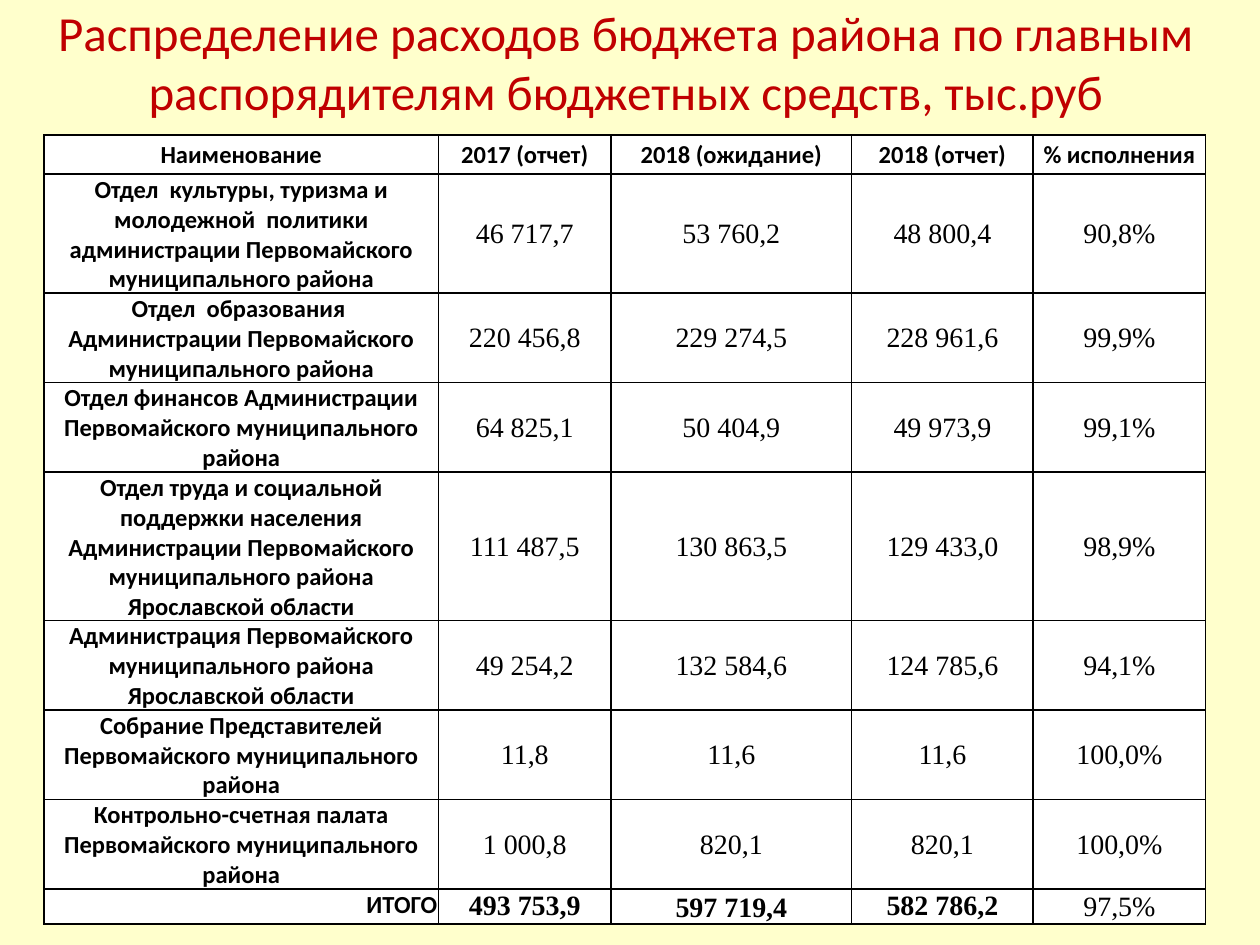
from dataclasses import dataclass

from lxml import etree
from pptx import Presentation
from pptx import util as u
from pptx.dml.color import RGBColor
from pptx.enum import text
from pptx.oxml import ns

WIDTH, HEIGHT = 10, 7.5
LINE_HEIGHT = 0.23
HEADER_HEIGHT = 0.31
COLUMN_WIDTHS = (3.13, 1.37, 1.91, 1.44, 1.37)
BLACK, WHITE, RED, CREAM = "000000", "FFFFFF", "C00000", "FFFFCC"
LABEL = dict(size=14, font="Calibri", bold=True)
VALUE = dict(size=16, font="Times New Roman", bold=False)
TOTAL = dict(VALUE, bold=True)
TOP, MIDDLE, BOTTOM = (
    text.MSO_ANCHOR.TOP,
    text.MSO_ANCHOR.MIDDLE,
    text.MSO_ANCHOR.BOTTOM,
)


@dataclass
class Department:
    name: str
    values: tuple[str, ...]
    lines: int = 3
    anchor: text.MSO_ANCHOR = TOP


HEADINGS = ("Наименование", "2017 (отчет)", "2018 (ожидание)", "2018 (отчет)", "% исполнения")
DEPARTMENTS = (
    Department(
        "Отдел  культуры, туризма и молодежной  политики администрации Первомайского муниципального района",
        ("46 717,7", "53 760,2", "48 800,4", "90,8%"), 4, MIDDLE,
    ),
    Department(
        "Отдел  образования  Администрации Первомайского муниципального района",
        ("220 456,8", "229 274,5", "228 961,6", "99,9%"),
    ),
    Department(
        "Отдел финансов Администрации Первомайского муниципального района",
        ("64 825,1", "50 404,9", "49 973,9", "99,1%"),
    ),
    Department(
        "Отдел труда и социальной поддержки населения Администрации Первомайского муниципального района Ярославской области",
        ("111 487,5", "130 863,5", "129 433,0", "98,9%"), 5,
    ),
    Department(
        "Администрация Первомайского муниципального района Ярославской области",
        ("49 254,2", "132 584,6", "124 785,6", "94,1%"),
    ),
    Department(
        "Собрание Представителей Первомайского муниципального района",
        ("11,8", "11,6", "11,6", "100,0%"),
    ),
    Department(
        "Контрольно-счетная палата Первомайского муниципального района",
        ("1 000,8", "820,1", "820,1", "100,0%"),
    ),
)
TOTALS = (
    ("493 753,9", TOTAL, TOP),
    ("597 719,4", TOTAL, BOTTOM),
    ("582 786,2", TOTAL, TOP),
    ("97,5%", VALUE, MIDDLE),
)


def colour(value: str) -> RGBColor:
    return RGBColor.from_string(value)


def write(frame, words: str, *, size, font, bold=False, ink=BLACK, align=text.PP_ALIGN.CENTER):
    para = frame.paragraphs[0]
    para.alignment = align
    span = para.add_run()
    span.text = words
    span.font.size = u.Pt(size)
    span.font.name = font
    span.font.bold = bold
    span.font.color.rgb = colour(ink)
    return span


def make_line(tag: str, width: float, ink: str):
    line = etree.Element(ns.qn(tag), w=str(u.Pt(width)))
    fill = etree.SubElement(line, ns.qn("a:solidFill"))
    etree.SubElement(fill, ns.qn("a:srgbClr"), val=ink)
    return line


def fill_cell(cell, words: str, anchor: text.MSO_ANCHOR, **style) -> None:
    cell.margin_left = cell.margin_right = cell.margin_top = u.Inches(0.01)
    cell.margin_bottom = 0
    cell.vertical_anchor = anchor
    properties = cell._tc.get_or_add_tcPr()
    for tag in ("a:lnL", "a:lnR", "a:lnT", "a:lnB"):
        properties.append(make_line(tag, 1, BLACK))
    cell.fill.solid()
    cell.fill.fore_color.rgb = colour(WHITE)
    write(cell.text_frame, words, **style)


def add_title(page) -> None:
    box = page.shapes.add_textbox(*map(u.Inches, (0.2, 0.05, 9.53, 0.87)))
    frame = box.text_frame
    frame.word_wrap = True
    frame.vertical_anchor = MIDDLE
    span = write(
        frame,
        "Распределение расходов бюджета района по главным распорядителям бюджетных средств, тыс.руб",
        size=28, font="Calibri", ink=RED,
    )
    span.font._element.insert(0, make_line("a:ln", 0.75, RED))


def add_budget_table(page) -> None:
    heights = [HEADER_HEIGHT]
    heights += [LINE_HEIGHT * department.lines for department in DEPARTMENTS]
    heights.append(LINE_HEIGHT)
    size = (sum(COLUMN_WIDTHS), sum(heights))
    table = page.shapes.add_table(
        len(heights), len(COLUMN_WIDTHS), *map(u.Inches, (0.35, 1.07, *size))
    ).table
    table.first_row = table.horz_banding = False
    for column, width in zip(table.columns, COLUMN_WIDTHS):
        column.width = u.Inches(width)
    for row, height in zip(table.rows, heights):
        row.height = u.Inches(height)

    for column, heading in enumerate(HEADINGS):
        fill_cell(table.cell(0, column), heading, MIDDLE, **LABEL)
    for row, department in enumerate(DEPARTMENTS, 1):
        fill_cell(table.cell(row, 0), department.name, department.anchor, **LABEL)
        for column, value in enumerate(department.values, 1):
            fill_cell(table.cell(row, column), value, MIDDLE, **VALUE)
    last = len(heights) - 1
    fill_cell(table.cell(last, 0), "ИТОГО", TOP, align=text.PP_ALIGN.RIGHT, **LABEL)
    for column, (value, style, anchor) in enumerate(TOTALS, 1):
        fill_cell(table.cell(last, column), value, anchor, **style)


def main() -> None:
    deck = Presentation()
    deck.slide_width, deck.slide_height = u.Inches(WIDTH), u.Inches(HEIGHT)
    page = deck.slides.add_slide(deck.slide_layouts[6])
    page.background.fill.solid()
    page.background.fill.fore_color.rgb = colour(CREAM)
    add_title(page)
    add_budget_table(page)
    deck.save("out.pptx")


if __name__ == "__main__":
    main()
